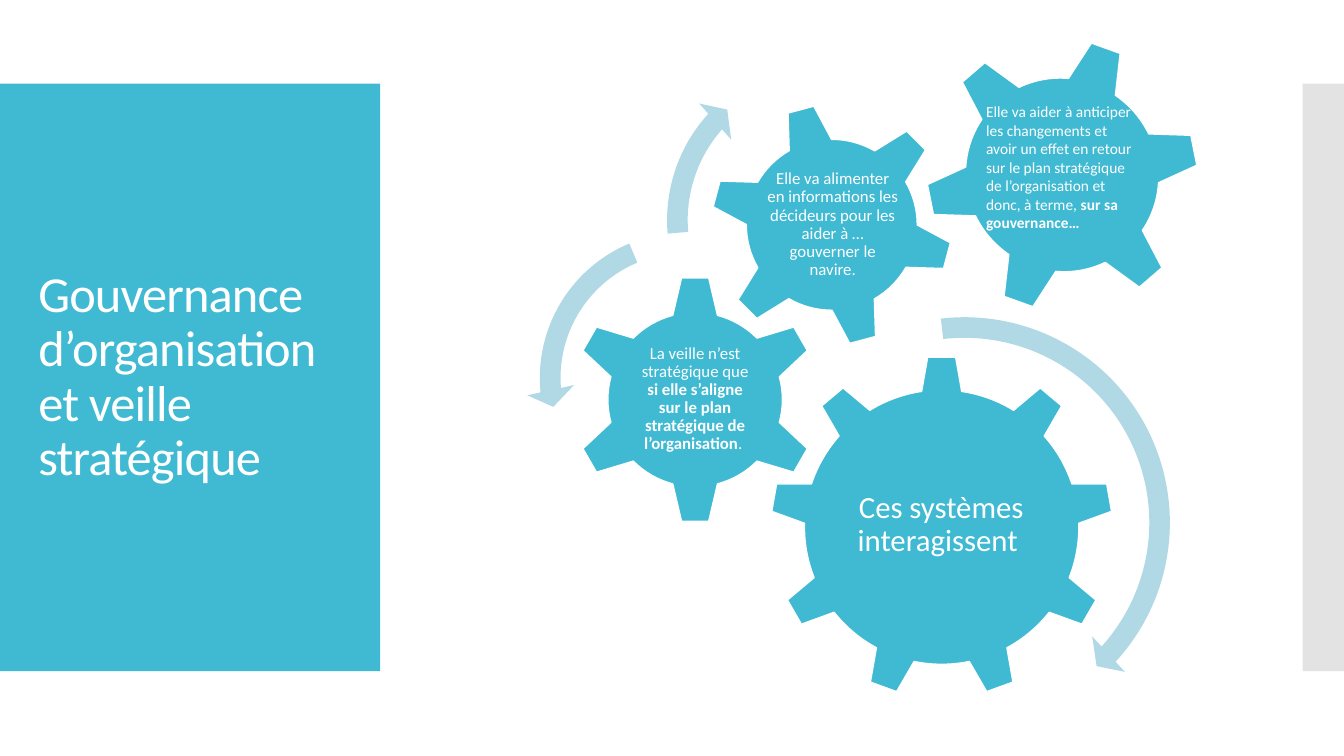
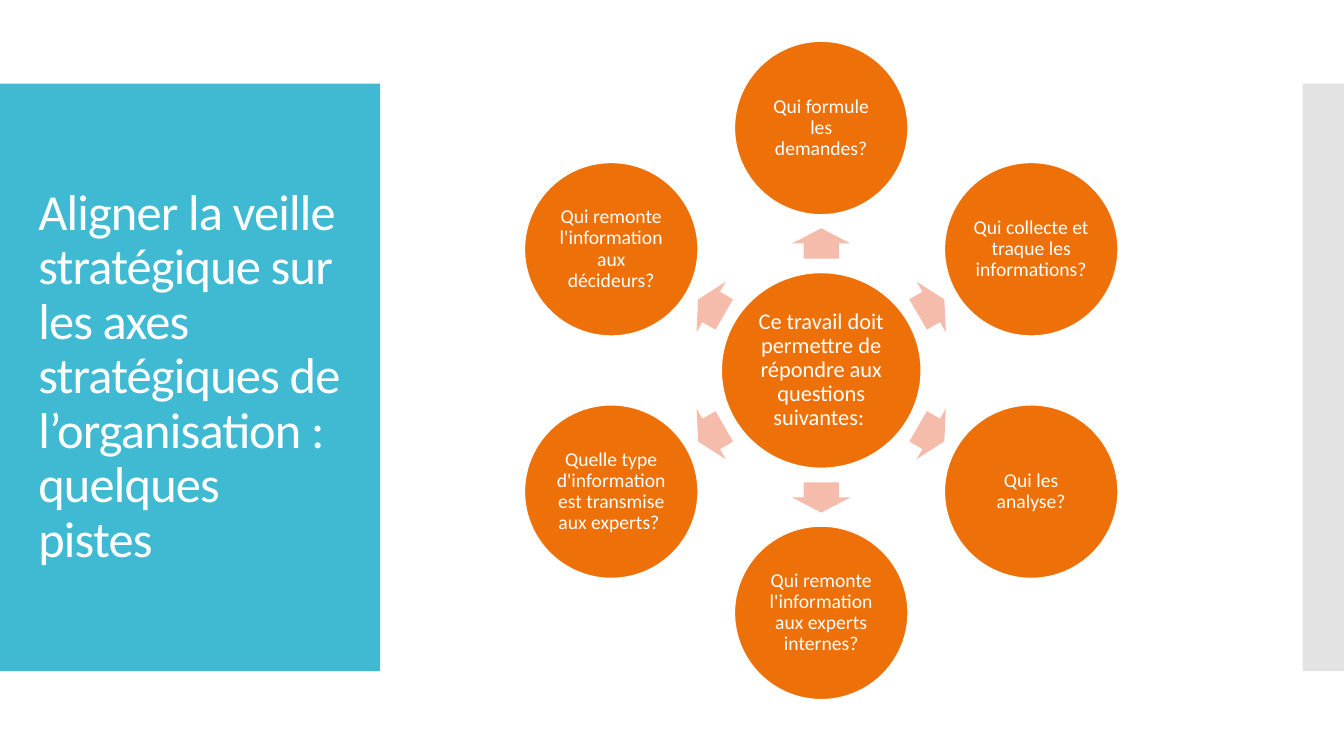
from dataclasses import dataclass
from math import cos, radians, sin

from lxml import etree
from pptx import Presentation
from pptx.dml.color import RGBColor
from pptx.enum.shapes import MSO_SHAPE
from pptx.enum.text import MSO_ANCHOR, MSO_AUTO_SIZE, PP_ALIGN
from pptx.oxml import parse_xml
from pptx.oxml.ns import nsdecls, qn
from pptx.util import Inches, Pt

RECT, OVAL = MSO_SHAPE.RECTANGLE, MSO_SHAPE.OVAL
GEAR_6, GEAR_9 = MSO_SHAPE.GEAR_6, MSO_SHAPE.GEAR_9
RIGHT_ARROW = MSO_SHAPE.RIGHT_ARROW
CIRCULAR, LEFT_CIRCULAR = MSO_SHAPE.CIRCULAR_ARROW, MSO_SHAPE.LEFT_CIRCULAR_ARROW
MIDDLE, NO_FIT = MSO_ANCHOR.MIDDLE, MSO_AUTO_SIZE.NONE
LEFT, CENTER = PP_ALIGN.LEFT, PP_ALIGN.CENTER


@dataclass(frozen=True)
class Theme:
    """Colours, font and type sizes of the presentation."""
    blue: str = "40BAD2"
    pale_blue: str = "B0D9E5"
    orange: str = "EE7008"
    pale_orange: str = "F5BBAB"
    grey: str = "C8C8C8"
    white: str = "FFFFFF"
    font: str = "Calibri"
    title: int = 36
    system: int = 22
    hub: int = 16
    question: int = 14
    gear: int = 12
    small: int = 11
    outline: float = 0.85
    tight: float = 0.9
    inset: float = 0.02


T = Theme()
DIAGRAM = (5.2, 0.36, 6.69, 7)
WHEEL = (5.2, 0.41, 5.89, 6.53)

GEARS = [
    (GEAR_9, (2.44, 3.17, 3.4, 3.4), 0, (3.12, 3.97, 2.03, 1.75),
     T.system, CENTER, T.tight, [("Ces systèmes interagissent ", False)]),
    (GEAR_6, (0.46, 2.37, 2.47, 2.47), 0, (1.08, 2.99, 1.23, 1.22),
     T.gear, CENTER, T.tight,
     [("La veille n’est stratégique que ", False),
      ("si elle s’aligne sur le plan stratégique de l’organisation", True),
      (". ", False)]),
    (GEAR_6, (1.84, 0.66, 2.42, 2.42), 345, (2.38, 1.19, 1.36, 1.36),
     T.gear, CENTER, T.tight,
     [("Elle va alimenter en informations les décideurs pour les "
       "aider à … gouverner le navire.", False)]),
    (GEAR_6, (3.98, 0, 2.71, 2.75), 319.2, (4.56, 0.53, 1.52, 1.54),
     T.small, LEFT, 1.0,
     [("Elle va aider à anticiper les changements et avoir un effet en retour "
       "sur le plan stratégique de l’organisation et donc, à terme, ", False),
      ("sur sa gouvernance…", True)]),
]

TURNS = [
    (CIRCULAR, (2.19, 2.65, 4.35, 4.35), (0.047, 2.99, 25.427, 158.053, 0.055)),
    (LEFT_CIRCULAR, (0.02, 1.81, 3.16, 3.16), (0.065, 4.3, 104.891, 148.378, 0.075)),
    (CIRCULAR, (1.28, 0.12, 3.41, 3.41), (0.06, 3.941, 133.138, 105.082, 0.07)),
]

QUESTIONS = [
    "Qui formule les demandes?",
    "Qui collecte et traque les informations?",
    "Qui les analyse?",
    "Qui remonte l'information aux experts internes?",
    "Quelle type d'information est transmise aux experts? ",
    "Qui remonte l'information aux décideurs?",
]


def lengths(box):
    """Turn a box in inches into lengths."""
    return [Inches(v) for v in box]


def within(area, box):
    """Shift a box by the corner of its area."""
    return (area[0] + box[0], area[1] + box[1], box[2], box[3])


def centred(x, y, w, h):
    """Give the box of a size around a centre."""
    return (x - w / 2, y - h / 2, w, h)


def add_preset(slide, kind, box, fill, outlined=False, rotation=0, adjustments=()):
    """Add a flat preset shape."""
    sp = slide.shapes.add_shape(kind, *lengths(box))
    sp.shadow.inherit = False
    sp.rotation = rotation
    sp.fill.solid()
    sp.fill.fore_color.rgb = RGBColor.from_string(fill)
    if outlined:
        sp.line.color.rgb = RGBColor.from_string(T.white)
        sp.line.width = Pt(T.outline)
    else:
        sp.line.fill.background()
    for i, value in enumerate(adjustments):
        sp.adjustments[i] = value
    return sp


def write(sp, runs, size, align=CENTER, spacing=T.tight):
    """Write white runs in the middle of a shape."""
    tf = sp.text_frame
    tf.word_wrap, tf.auto_size, tf.vertical_anchor = True, NO_FIT, MIDDLE
    tf.margin_left = tf.margin_right = Inches(T.inset)
    tf.margin_top = tf.margin_bottom = Inches(T.inset)
    p = tf.paragraphs[0]
    p.alignment, p.line_spacing = align, spacing
    for text, bold in runs:
        r = p.add_run()
        r.text = text
        r.font.name, r.font.size, r.font.bold = T.font, Pt(size), bold
        r.font.color.rgb = RGBColor.from_string(T.white)


def style_layout(layout):
    """Set the place and style of every title."""
    for ph in list(layout.placeholders):
        if ph.placeholder_format.idx:
            ph.element.getparent().remove(ph.element)
    title = layout.placeholders[0]
    title.left, title.top, title.width, title.height = lengths((0.28, 1.23, 3.22, 5.03))
    tf = title.text_frame
    tf.word_wrap, tf.auto_size, tf.vertical_anchor = True, NO_FIT, MIDDLE
    title.element.txBody.find(qn("a:lstStyle")).append(parse_xml(
        f'<a:lvl1pPr {nsdecls("a")} algn="l">'
        f'<a:lnSpc><a:spcPct val="{T.tight * 100000:.0f}"/></a:lnSpc>'
        f'<a:defRPr sz="{T.title * 100}" spc="-60">'
        f'<a:solidFill><a:srgbClr val="{T.white}"/></a:solidFill>'
        f'<a:latin typeface="{T.font}"/></a:defRPr></a:lvl1pPr>'))


def add_bands(slide, layout):
    """Draw the side bands and hand them to the layout."""
    panel = add_preset(slide, RECT, (0, 0.83, 3.77, 5.83), T.blue)
    edge = add_preset(slide, RECT, (12.92, 0.83, 0.42, 5.83), T.grey)
    colour = edge.element.spPr.find(".//" + qn("a:srgbClr"))
    etree.SubElement(colour, qn("a:alpha")).set("val", "50000")
    for sp in (edge, panel):
        layout.shapes.element.insert(2, sp.element)


def add_title(slide, lines):
    """Fill the title placeholder line by line."""
    p = slide.shapes.title.text_frame.paragraphs[0]
    for i, line in enumerate(lines):
        if i:
            p.add_line_break()
        p.add_run().text = line


def add_gears(slide, area):
    """Place the gears, their texts and the turning arrows in an area."""
    for kind, box, rotation, text_box, size, align, spacing, runs in GEARS:
        add_preset(slide, kind, within(area, box), T.blue, True, rotation)
        tb = slide.shapes.add_textbox(*lengths(within(area, text_box)))
        write(tb, runs, size, align, spacing)
    for kind, box, adjustments in TURNS:
        add_preset(slide, kind, within(area, box), T.pale_blue, adjustments=adjustments)


def add_wheel(slide, area, hub_text, questions):
    """Place a hub and its ring of questions in an area."""
    x, y, w, h = area
    cx, cy, size = x + w / 2, y + h / 2, 1.72
    ring, arrow_ring = (h - size) / 2, 1.26
    hub = add_preset(slide, OVAL, centred(cx, cy, 1.98, 1.94), T.orange, True)
    write(hub, [(hub_text, False)], T.hub)
    for i, question in enumerate(questions):
        angle = (270 + i * 360 / len(questions)) % 360
        dx, dy = cos(radians(angle)), sin(radians(angle))
        arrow_box = centred(cx + arrow_ring * dx, cy + arrow_ring * dy, 0.3, 0.58)
        add_preset(slide, RIGHT_ARROW, arrow_box, T.pale_orange,
                   rotation=angle, adjustments=(0.6, 0.5))
        circle_box = centred(cx + ring * dx, cy + ring * dy, size, size)
        circle = add_preset(slide, OVAL, circle_box, T.orange, True)
        write(circle, [(question, False)], T.question)


def main():
    """Build and save the presentation."""
    prs = Presentation()
    prs.slide_width, prs.slide_height = Inches(13.33), Inches(7.5)
    layout = prs.slide_layouts.get_by_name("Title Only")
    style_layout(layout)

    s = prs.slides.add_slide(layout)
    add_bands(s, layout)
    add_title(s, ["Gouvernance d’organisation et veille stratégique"])
    add_gears(s, DIAGRAM)

    s = prs.slides.add_slide(layout)
    add_title(s, ["Aligner la veille stratégique sur les axes stratégiques "
                  "de l’organisation :", "quelques pistes"])
    add_wheel(s, WHEEL, "Ce travail doit permettre de répondre aux questions suivantes: ",
              QUESTIONS)
    prs.save("out.pptx")


if __name__ == "__main__":
    main()
